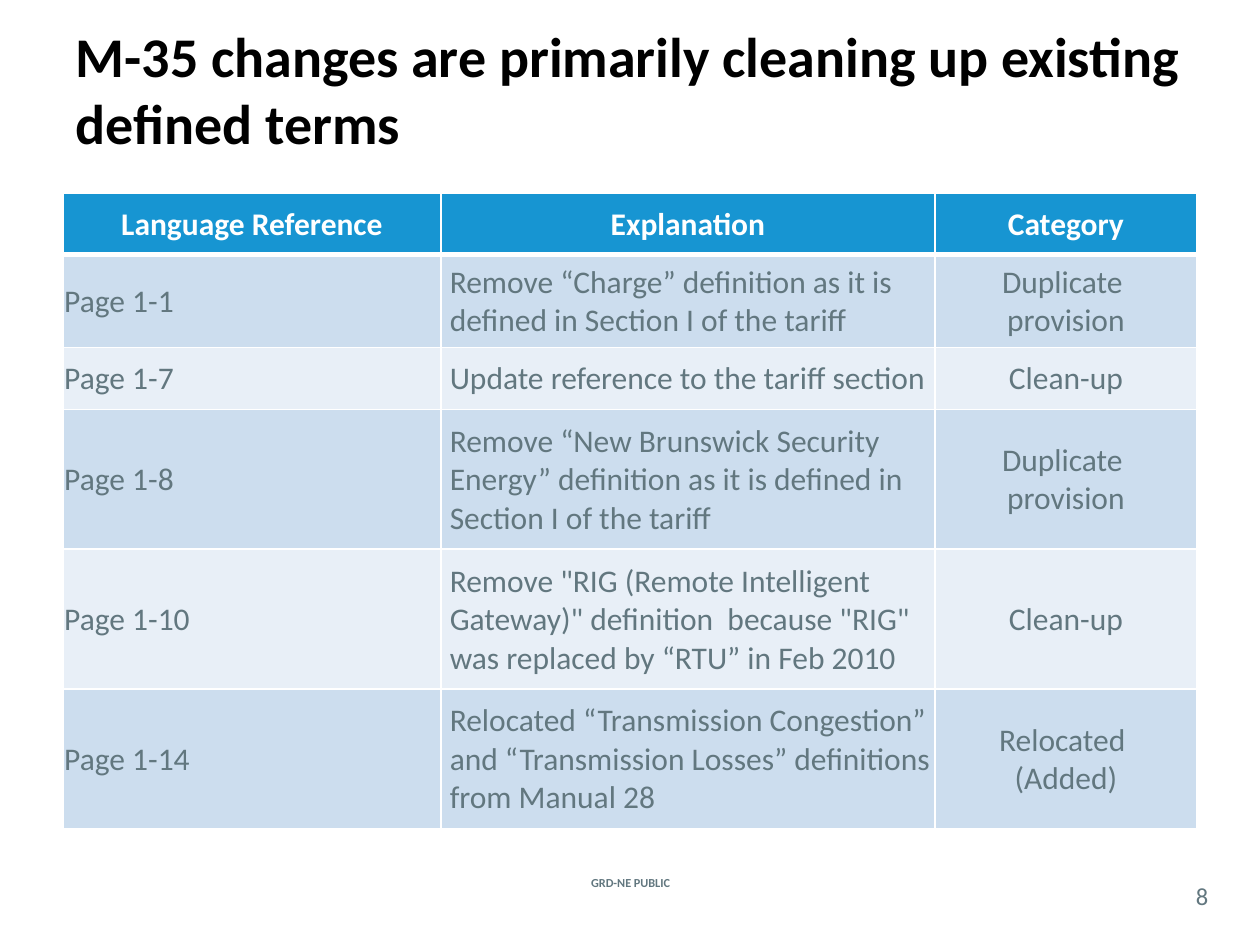
from lxml.etree import SubElement
from pptx import Presentation
from pptx.dml.color import RGBColor
from pptx.enum.text import MSO_ANCHOR as Anchor, PP_ALIGN as Align
from pptx.oxml.ns import qn
from pptx.util import Inches, Pt

BLACK = RGBColor(0x00, 0x00, 0x00)
WHITE = RGBColor(0xFF, 0xFF, 0xFF)
SLATE = RGBColor(0x62, 0x77, 0x7F)
HEADER_BLUE = RGBColor(0x17, 0x95, 0xD2)
BAND_DARK = RGBColor(0xCC, 0xDD, 0xEE)
BAND_LIGHT = RGBColor(0xE8, 0xEF, 0xF7)

TITLE = "M-35 changes are primarily cleaning up existing defined terms"
HEADINGS = ("Language Reference", "Explanation", "Category")
CHANGES = [
    ("Page 1-1", "Remove “Charge” definition as it is defined in Section I of the tariff",
     "Duplicate \nprovision"),
    ("Page 1-7", "Update reference to the tariff section", "Clean-up"),
    ("Page 1-8", "Remove “New Brunswick Security Energy” definition as it is defined in "
     "Section I of the tariff", "Duplicate \nprovision"),
    ("Page 1-10", "Remove \"RIG (Remote Intelligent Gateway)\" definition  because \"RIG\" "
     "was replaced by “RTU” in Feb 2010", "Clean-up"),
    ("Page 1-14", "Relocated “Transmission Congestion” and “Transmission Losses” definitions "
     "from Manual 28", "Relocated \n(Added)"),
]
COLUMN_WIDTHS = (3, 3.92, 2.08)
ROW_HEIGHTS = (0.49, 0.74, 0.49, 1.11, 1.11, 1.11)
COLUMN_ALIGNS = (Align.LEFT, Align.LEFT, Align.CENTER)
COLUMN_INDENTS = (0, 0.06, 0)


def write_text(frame, text, size=18, color=SLATE, bold=False, align=Align.LEFT, indent=0):
    """Fill a text frame, one paragraph for each line of text."""
    frame.text = text
    for paragraph in frame.paragraphs:
        paragraph.alignment = align
        if indent:
            paragraph._p.get_or_add_pPr().set("marL", str(Inches(indent)))
        for run in paragraph.runs:
            font = run.font
            font.name, font.size, font.bold = "Calibri", Pt(size), bold
            font.color.rgb = color


def add_label(slide, text, left, top, width, height, **text_format):
    frame = slide.shapes.add_textbox(
        Inches(left), Inches(top), Inches(width), Inches(height)).text_frame
    frame.word_wrap = True
    frame.vertical_anchor = Anchor.MIDDLE
    frame.margin_left = frame.margin_right = frame.margin_top = frame.margin_bottom = 0
    write_text(frame, text, align=Align.CENTER, **text_format)


def set_title(slide, text):
    title = slide.shapes.title
    title.left, title.top = Inches(0.5), Inches(0.08)
    title.width, title.height = Inches(9), Inches(1.25)
    title.text_frame.word_wrap = True
    title.text_frame.vertical_anchor = Anchor.MIDDLE
    write_text(title.text_frame, text, size=32, color=BLACK, bold=True)


def add_borders(cell, top=1, bottom=1):
    """Draw white cell borders; must precede the fill in the cell's XML."""
    properties = cell._tc.get_or_add_tcPr()
    for side, width in (("L", 1), ("R", 1), ("T", top), ("B", bottom)):
        line = SubElement(properties, qn(f"a:ln{side}"), w=str(Pt(width)))
        SubElement(SubElement(line, qn("a:solidFill")), qn("a:srgbClr"), val=str(WHITE))


def format_cell(cell, text, fill, top=1, bottom=1, **text_format):
    cell.margin_left = cell.margin_right = cell.margin_top = Inches(0.01)
    cell.margin_bottom = 0
    cell.vertical_anchor = Anchor.MIDDLE
    add_borders(cell, top, bottom)
    cell.fill.solid()
    cell.fill.fore_color.rgb = fill
    write_text(cell.text_frame, text, **text_format)


def add_changes_table(slide):
    table = slide.shapes.add_table(
        len(ROW_HEIGHTS), len(COLUMN_WIDTHS), Inches(0.5), Inches(1.53),
        Inches(sum(COLUMN_WIDTHS)), Inches(sum(ROW_HEIGHTS))).table
    for column, width in zip(table.columns, COLUMN_WIDTHS):
        column.width = Inches(width)
    for row, height in zip(table.rows, ROW_HEIGHTS):
        row.height = Inches(height)
    for column, heading in enumerate(HEADINGS):
        format_cell(table.cell(0, column), heading, HEADER_BLUE, bottom=3,
                    color=WHITE, bold=True, align=Align.CENTER)
    for row, change in enumerate(CHANGES, start=1):
        for column, text in enumerate(change):
            format_cell(table.cell(row, column), text,
                        BAND_DARK if row % 2 else BAND_LIGHT,
                        top=3 if row == 1 else 1,
                        align=COLUMN_ALIGNS[column], indent=COLUMN_INDENTS[column])


def main():
    presentation = Presentation()
    presentation.slide_width, presentation.slide_height = Inches(10), Inches(7.5)
    slide = presentation.slides.add_slide(presentation.slide_layouts[5])
    set_title(slide, TITLE)
    add_label(slide, "GRD-NE PUBLIC", 4.27, 6.92, 1.47, 0.17, size=7, bold=True)
    add_label(slide, "8", 9.33, 6.96, 0.42, 0.29, size=14)
    add_changes_table(slide)
    presentation.save("out.pptx")


if __name__ == "__main__":
    main()
